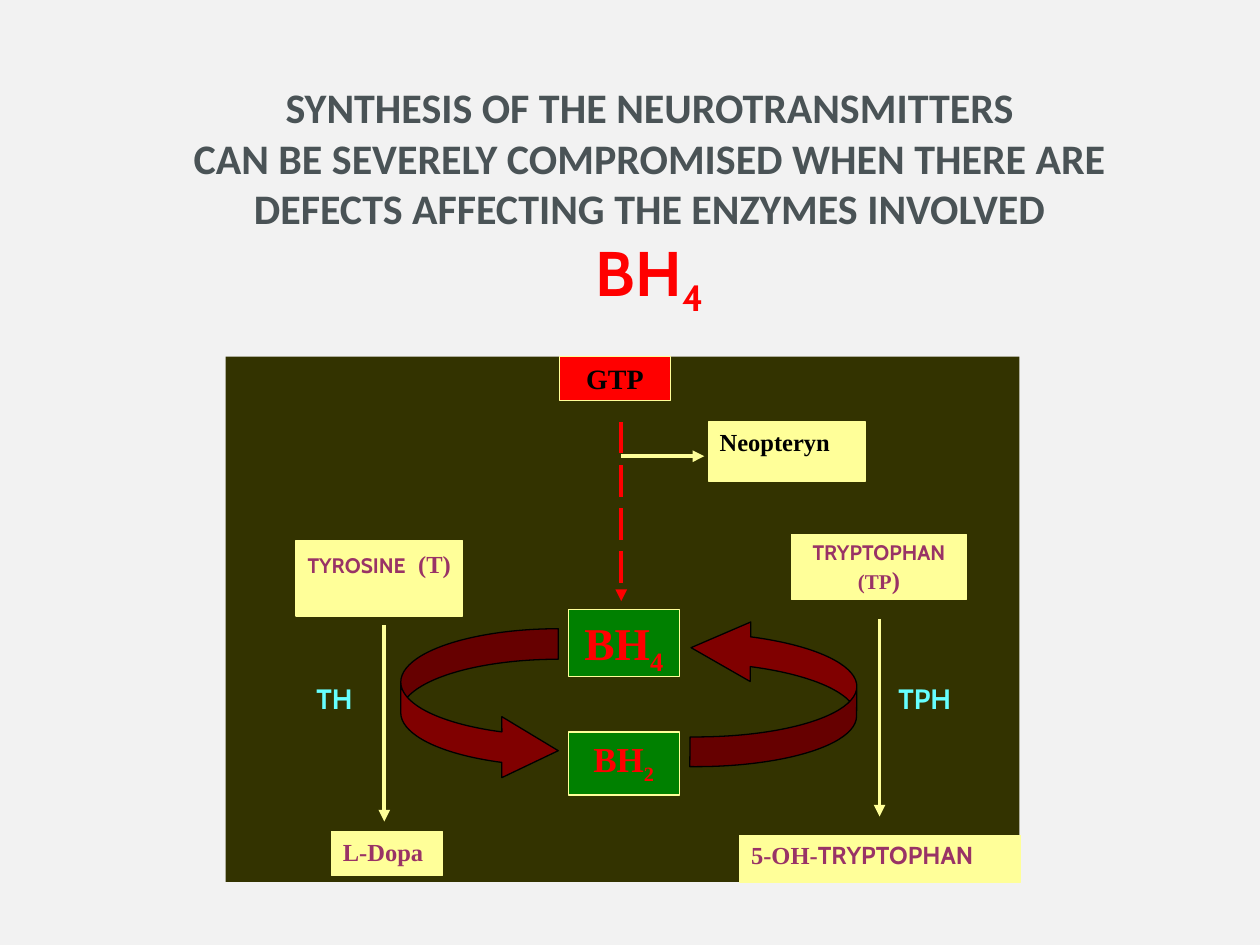
from pptx import Presentation
from pptx.dml.color import RGBColor
from pptx.enum.dml import MSO_LINE
from pptx.enum.shapes import MSO_CONNECTOR, MSO_SHAPE
from pptx.enum.text import MSO_ANCHOR, PP_ALIGN
from pptx.oxml.ns import qn
from pptx.util import Pt
from lxml.etree import SubElement

BACKGROUND = RGBColor(0xF2, 0xF2, 0xF2)
OLIVE = RGBColor(0x33, 0x33, 0x00)
CREAM = RGBColor(0xFF, 0xFF, 0x99)
GREEN = RGBColor(0x00, 0x80, 0x00)
RED = RGBColor(0xFF, 0x00, 0x00)
MAROON = RGBColor(0x80, 0x00, 0x00)
PLUM = RGBColor(0x99, 0x33, 0x66)
CYAN = RGBColor(0x66, 0xFF, 0xFF)
SLATE = RGBColor(0x4A, 0x53, 0x56)
BLACK = RGBColor(0x00, 0x00, 0x00)

SANS, SERIF, TITLE_FONT = "Cabin", "Times New Roman", "Calibri"
LEFT, CENTER = PP_ALIGN.LEFT, PP_ALIGN.CENTER


def style_font(font, name, size, color, bold=True):
    font.name, font.size, font.bold = name, Pt(size), bold
    font.color.rgb = color


def add_formula(paragraph, symbol, subscript):
    paragraph.add_run().text = symbol
    run = paragraph.add_run()
    run.text = subscript
    run._r.get_or_add_rPr().set("baseline", "-25000")


def set_margins(text_frame):
    text_frame.margin_left = text_frame.margin_right = Pt(6.5)
    text_frame.margin_top = text_frame.margin_bottom = Pt(2.9)


def add_title(slide, left, top, width, height):
    text_frame = slide.shapes.add_textbox(Pt(left), Pt(top), Pt(width), Pt(height)).text_frame
    text_frame.word_wrap = True
    lines = (
        "SYNTHESIS OF THE NEUROTRANSMITTERS",
        "CAN BE SEVERELY COMPROMISED WHEN THERE ARE DEFECTS AFFECTING THE ENZYMES INVOLVED",
    )
    text_frame.text = "\n".join(lines)
    for paragraph in text_frame.paragraphs:
        paragraph.alignment = CENTER
        style_font(paragraph.font, TITLE_FONT, 24, SLATE)
    paragraph = text_frame.add_paragraph()
    paragraph.alignment = CENTER
    style_font(paragraph.font, SANS, 36, RED)
    add_formula(paragraph, "BH", "4")


def add_pathway(slide, left, top, width, height):
    """Draw the BH4 cycle; all inner offsets are measured from the panel's corner."""

    def add_block(kind, x, y, w, h, fill, line=None):
        shape = slide.shapes.add_shape(kind, Pt(left + x), Pt(top + y), Pt(w), Pt(h))
        shape.shadow.inherit = False
        shape.fill.solid()
        shape.fill.fore_color.rgb = fill
        if line is None:
            shape.line.fill.background()
        else:
            shape.line.color.rgb = line
            shape.line.width = Pt(0.75)
        return shape

    def add_box(x, y, w, h, fill=CREAM, alignment=LEFT):
        """Add a framed box and return its first paragraph."""
        text_frame = add_block(MSO_SHAPE.RECTANGLE, x, y, w, h, fill, CREAM).text_frame
        set_margins(text_frame)
        text_frame.word_wrap = True
        text_frame.vertical_anchor = MSO_ANCHOR.TOP
        text_frame.paragraphs[0].alignment = alignment
        return text_frame.paragraphs[0]

    def add_runs(paragraph, runs):
        for text, *style in runs:
            run = paragraph.add_run()
            run.text = text
            style_font(run.font, *style)

    def add_arrow(x1, y1, x2, y2, color=CREAM, dash=None):
        connector = slide.shapes.add_connector(
            MSO_CONNECTOR.STRAIGHT, Pt(left + x1), Pt(top + y1), Pt(left + x2), Pt(top + y2))
        connector.line.color.rgb = color
        connector.line.width = Pt(2.25)
        if dash is not None:
            connector.line.dash_style = dash
        SubElement(connector.line._get_or_add_ln(), qn("a:tailEnd"), type="triangle")
        SubElement(connector._element.spPr, qn("a:effectLst"))

    def add_curved_arrow(kind, x, y, w, h, head_length):
        shape = add_block(kind, x, y, w, h, MAROON, BLACK)
        for index, value in enumerate((0.2, 0.4, head_length)):
            shape.adjustments[index] = value
        return shape

    def add_enzyme(name, x, w):
        label = slide.shapes.add_textbox(Pt(left + x), Pt(top + 182.9), Pt(w), Pt(25.2))
        text_frame = label.text_frame
        set_margins(text_frame)
        text_frame.vertical_anchor = MSO_ANCHOR.MIDDLE
        text_frame.text = name
        style_font(text_frame.paragraphs[0].font, SANS, 16, CYAN)

    add_block(MSO_SHAPE.RECTANGLE, 0, 0, width, height, OLIVE)

    tyrosine = add_box(40.3, 105.1, 95, 43.2, alignment=CENTER)
    add_runs(tyrosine, (("TYROSINE", SANS, 12, PLUM), (" ", SANS, 16, PLUM, False),
                        (" (T)", SERIF, 14, PLUM)))
    tryptophan = add_box(323.3, 101.5, 100.1, 37.4, alignment=CENTER)
    add_runs(tryptophan, (("TRYPTOPHAN ", SANS, 12, PLUM), ("(TP", SERIF, 12, PLUM),
                          (")", SERIF, 14, PLUM)))
    hydroxytryptophan = add_box(293.8, 273.6, 160.6, 26.6)
    add_runs(hydroxytryptophan, (("5-OH-", SERIF, 14, PLUM), ("TRYPTOPHAN", SANS, 14, PLUM)))

    for text, box, fill, alignment, size, color in (
        ("L-Dopa", (60.5, 271.4, 63.4, 25.2), CREAM, LEFT, 14, PLUM),
        ("GTP", (190.8, 0, 63.4, 25.2), RED, CENTER, 16, BLACK),
        ("Neopteryn", (275.8, 37.4, 90, 33.8), CREAM, LEFT, 14, BLACK),
    ):
        paragraph = add_box(*box, fill, alignment)
        paragraph.text = text
        style_font(paragraph.font, SERIF, size, color)

    for subscript, y, h, size in (("4", 144.7, 38.2, 26), ("2", 214.6, 36, 20)):
        paragraph = add_box(195.8, y, 63.4, h, GREEN, CENTER)
        style_font(paragraph.font, SERIF, size, RED)
        add_formula(paragraph, "BH", subscript)

    add_curved_arrow(MSO_SHAPE.CURVED_RIGHT_ARROW, 100.1, 155.5, 90, 87.1, 0.37)
    returning = add_curved_arrow(MSO_SHAPE.CURVED_LEFT_ARROW, 265.7, 149.8, 95, 85, 0.4)
    returning.rotation = 180.6
    returning._element.spPr.find(qn("a:xfrm")).set("flipH", "1")

    add_arrow(90.7, 153.4, 90.7, 265.7)
    add_arrow(373.7, 149.8, 373.7, 262.8)
    add_arrow(226.1, 37.4, 226.1, 139.7, RED, MSO_LINE.LONG_DASH)
    add_arrow(226.1, 56.9, 273.6, 56.9)

    add_enzyme("TH", 45.4, 36)
    add_enzyme("TPH", 378, 49)


def main():
    presentation = Presentation()
    presentation.slide_width, presentation.slide_height = Pt(720), Pt(540)
    slide = presentation.slides.add_slide(presentation.slide_layouts[6])
    slide.background.fill.solid()
    slide.background.fill.fore_color.rgb = BACKGROUND
    add_title(slide, 70.6, 43.2, 601.2, 138.2)
    add_pathway(slide, 128.9, 203.8, 453.6, 300.2)
    presentation.save("out.pptx")


if __name__ == "__main__":
    main()
